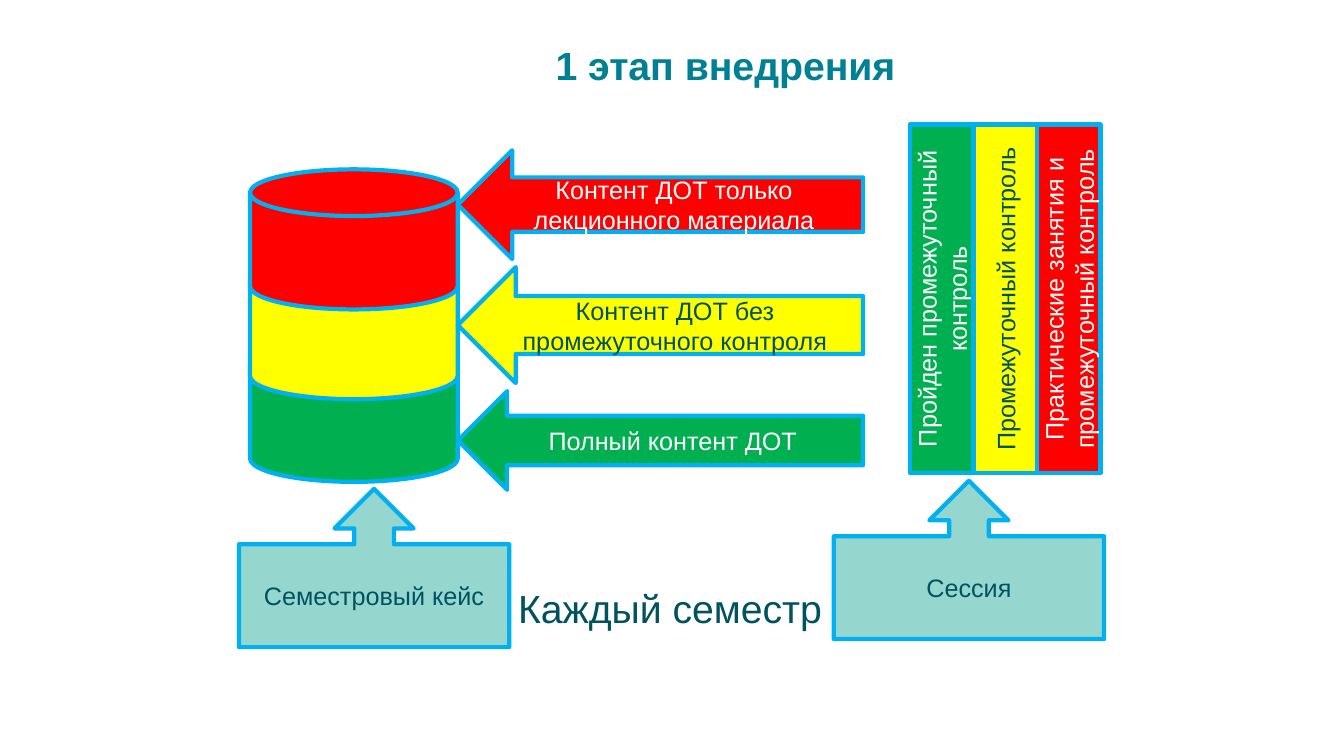
from pptx import Presentation
from pptx.dml.color import RGBColor
from pptx.enum.shapes import MSO_SHAPE as SHAPE
from pptx.enum.text import MSO_ANCHOR as ANCHOR, MSO_AUTO_SIZE as AUTO, PP_ALIGN as ALIGN
from pptx.util import Inches, Pt

GREEN, YELLOW, RED = "00B050", "FFFF00", "FF0000"
WHITE, DARK, TEAL = "FFFFFF", "005260", "008095"
MINT, BLUE = "95D7CF", "00B0F0"


def rgb(value):
    return RGBColor.from_string(value)


def write(sp, text, size, color, align, bold=False):
    tf = sp.text_frame
    tf.text = text
    tf.vertical_anchor = ANCHOR.MIDDLE
    p = tf.paragraphs[0]
    p.alignment = align
    font = p.runs[0].font
    font.name, font.size, font.bold = "Arial", Pt(size), bold
    font.color.rgb = rgb(color)


def add_block(shapes, kind, box, fill, text="", rotation=0):
    sp = shapes.add_shape(kind, *map(Inches, box))
    sp.shadow.inherit = False
    sp.rotation = rotation
    sp.fill.solid()
    sp.fill.fore_color.rgb = rgb(fill)
    sp.line.color.rgb = rgb(BLUE)
    sp.line.width = Pt(3)
    if text:
        color = WHITE if fill in (GREEN, RED) else DARK
        write(sp, text, 18, color, ALIGN.CENTER)


def add_heading(sp, box, text, color, bold=False):
    sp.left, sp.top, sp.width, sp.height = map(Inches, box)
    write(sp, text, 28, color, ALIGN.LEFT, bold)
    sp.text_frame.word_wrap = False
    sp.text_frame.auto_size = AUTO.NONE


def add_database(shapes):
    group = shapes.add_group_shape()
    for top, fill in ((3.39, GREEN), (2.57, YELLOW), (1.68, RED)):
        add_block(group.shapes, SHAPE.FLOWCHART_MAGNETIC_DISK, (2.48, top, 2.06, 1.39), fill)


def add_content_arrows(shapes):
    arrows = (
        (1.49, 1.08, RED, "Контент ДОТ только лекционного материала"),
        (2.65, 1.15, YELLOW, "Контент ДОТ без промежуточного контроля"),
        (3.88, 0.98, GREEN, "Полный контент ДОТ"),
    )
    for top, height, fill, text in arrows:
        add_block(shapes, SHAPE.LEFT_ARROW, (4.54, top, 4.02, height), fill, text)


def add_control_columns(shapes):
    group = shapes.add_group_shape()
    columns = (
        (GREEN, "Пройден промежуточный контроль"),
        (YELLOW, "Промежуточный контроль"),
        (RED, "Практические занятия и промежуточный контроль"),
    )
    length, thickness = 3.46, 0.63
    for i, (fill, text) in enumerate(columns):
        box = (7.61 + i * thickness, 2.65, length, thickness)
        add_block(group.shapes, SHAPE.RECTANGLE, box, fill, text, 270)


def main():
    prs = Presentation()
    prs.slide_width, prs.slide_height = Inches(13.33), Inches(7.5)
    s = prs.slides.add_slide(prs.slide_layouts[5])
    shapes = s.shapes

    add_heading(shapes.title, (5.41, 0.36, 3.62, 0.57), "1 этап внедрения", TEAL, True)
    add_database(shapes)
    add_content_arrows(shapes)
    add_control_columns(shapes)
    for left, top, text in ((2.37, 4.85, "Семестровый кейс"), (8.27, 4.77, "Сессия")):
        add_block(shapes, SHAPE.UP_ARROW_CALLOUT, (left, top, 2.68, 1.57), MINT, text)

    box = (5.04, 5.75, 3.23, 0.57)
    add_heading(shapes.add_textbox(*map(Inches, box)), box, "Каждый семестр", DARK)
    prs.save("out.pptx")


if __name__ == "__main__":
    main()
